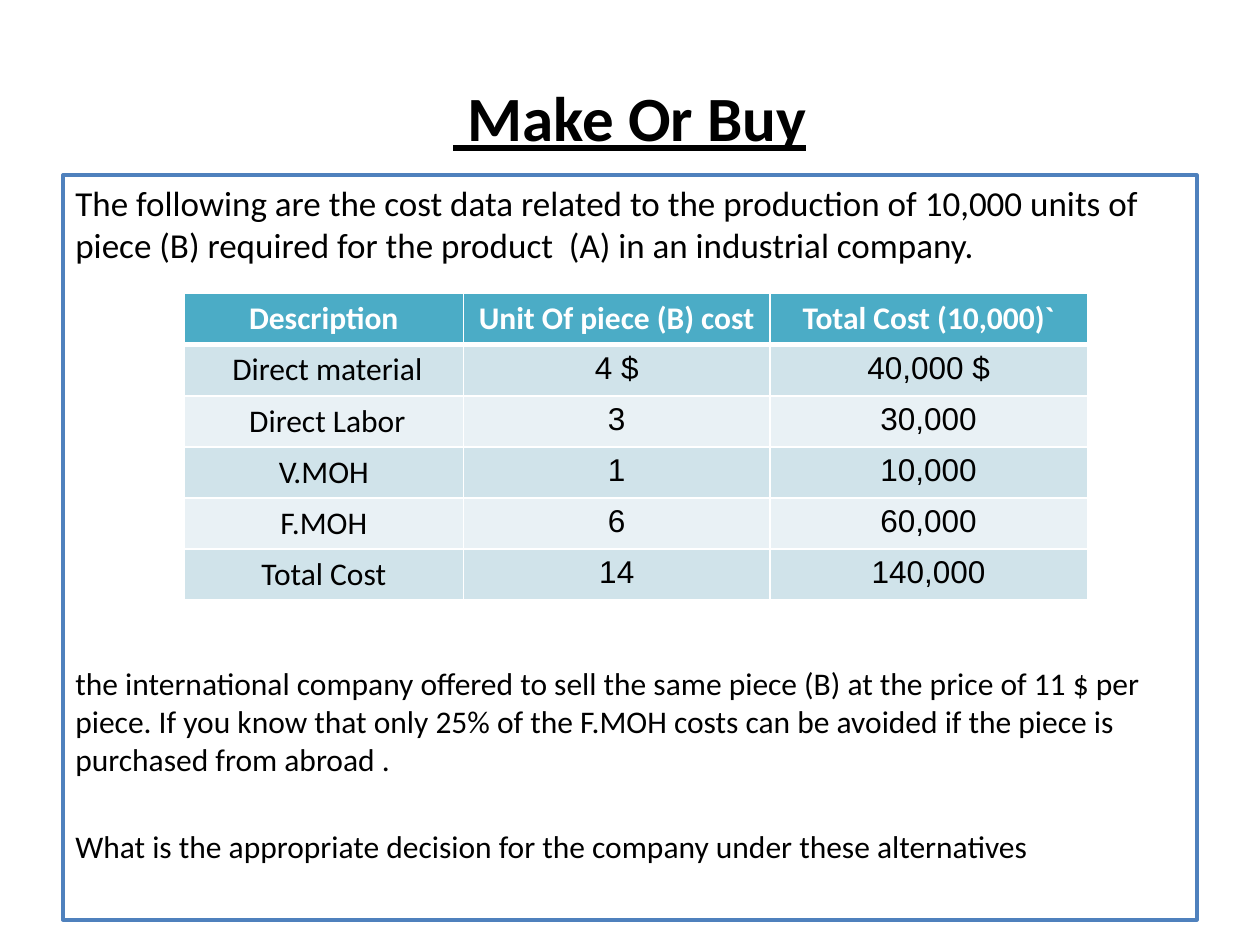
from dataclasses import dataclass

from lxml import etree
from pptx import Presentation
from pptx import util as u
from pptx.dml.color import RGBColor
from pptx.enum import shapes, text
from pptx.oxml import ns

PX = 9144  # EMU per px, at 100 px to the inch
FONT = "Calibri"
NUMBER_FONT = "Arial"
COLORS = {
    "text": "000000",
    "paper": "FFFFFF",
    "frame": "4F81BD",
    "header": "4BACC6",
    "band_dark": "D0E3EA",
    "band_light": "E9F1F5",
}


@dataclass(frozen=True)
class Box:
    left: int
    top: int
    width: int
    height: int

    def emu(self) -> tuple[int, ...]:
        return tuple(n * PX for n in (self.left, self.top, self.width, self.height))


@dataclass(frozen=True)
class BodyText:
    content: str
    size: int
    space_before: int = 0


@dataclass(frozen=True)
class CostRow:
    description: str
    unit_cost: str
    total_cost: str

    def cells(self) -> tuple[str, ...]:
        return self.description, self.unit_cost, self.total_cost


TITLE_BOX = Box(50, 30, 900, 125)
BODY_BOX = Box(50, 139, 900, 591)
TABLE_BOX = Box(146, 233, 717, 243)
COLUMN_WIDTHS = (222, 243, 252)

BODY = (
    BodyText("The following are the cost data related to the production of 10,000 units of "
             "piece (B) required for the product  (A) in an industrial company.", 20),
    BodyText("the international company offered to sell the same piece (B) at the price of "
             "11 $ per piece. If you know that only 25% of the F.MOH costs can be avoided if "
             "the piece is purchased from abroad .", 18, 228),
    BodyText("What is the appropriate decision for the company under these alternatives", 18, 28),
)

# Right-to-left cells: the currency sign is typed before the amount
COSTS = (
    CostRow("Description", "Unit Of piece (B) cost", "`Total Cost (10,000)"),
    CostRow("Direct material ", "$ 4", "$ 40,000"),
    CostRow("Direct Labor ", "3", "30,000"),
    CostRow("V.MOH", "1", "10,000"),
    CostRow("F.MOH", "6", "60,000"),
    CostRow("Total Cost", "14", "140,000"),
)


def rgb(name: str) -> RGBColor:
    return RGBColor.from_string(COLORS[name])


def write(paragraph, content: str, *, size: int, color: str = "text", bold: bool = False,
          underline: bool = False, align=text.PP_ALIGN.LEFT, rtl: bool = False,
          complex_font: str = FONT, space_before: int = 0) -> None:
    run = paragraph.add_run()
    run.text = content
    font = run.font
    font.name, font.size, font.bold, font.underline = FONT, u.Pt(size), bold, underline
    font.color.rgb = rgb(color)
    etree.SubElement(run._r.get_or_add_rPr(), ns.qn("a:cs"), typeface=complex_font)
    paragraph.alignment = align
    paragraph.space_before = u.Pt(space_before)
    if rtl:
        paragraph._p.get_or_add_pPr().set("rtl", "1")


def set_borders(cell, bottom_width: int) -> None:
    properties = cell._tc.get_or_add_tcPr()
    for side, width in (("L", 1), ("R", 1), ("T", 1), ("B", bottom_width)):
        line = etree.SubElement(properties, ns.qn(f"a:ln{side}"), w=str(u.Pt(width)))
        fill = etree.SubElement(line, ns.qn("a:solidFill"))
        etree.SubElement(fill, ns.qn("a:srgbClr"), val=COLORS["paper"])


def draw_title(slide) -> None:
    title = slide.shapes.title
    title.left, title.top, title.width, title.height = TITLE_BOX.emu()
    title.text_frame.vertical_anchor = text.MSO_ANCHOR.MIDDLE
    write(title.text_frame.paragraphs[0], "Make Or Buy ", size=36, bold=True,
          underline=True, align=text.PP_ALIGN.CENTER, rtl=True)


def draw_body(slide) -> None:
    shape = slide.shapes.add_shape(shapes.MSO_SHAPE.RECTANGLE, *BODY_BOX.emu())
    shape.shadow.inherit = False
    shape.fill.solid()
    shape.fill.fore_color.rgb = rgb("paper")
    shape.line.color.rgb = rgb("frame")
    shape.line.width = u.Pt(2)
    frame = shape.text_frame
    frame.word_wrap = True
    frame.vertical_anchor = text.MSO_ANCHOR.TOP
    for index, item in enumerate(BODY):
        paragraph = frame.add_paragraph() if index else frame.paragraphs[0]
        write(paragraph, item.content, size=item.size, space_before=item.space_before)


def draw_table(slide) -> None:
    table = slide.shapes.add_table(len(COSTS), len(COLUMN_WIDTHS), *TABLE_BOX.emu()).table
    for column, width in zip(table.columns, COLUMN_WIDTHS):
        column.width = width * PX
    for row_index, row in enumerate(COSTS):
        header = row_index == 0
        band = "header" if header else ("band_light", "band_dark")[row_index % 2]
        for column_index, content in enumerate(row.cells()):
            cell = table.cell(row_index, column_index)
            set_borders(cell, 3 if header else 1)
            cell.fill.solid()
            cell.fill.fore_color.rgb = rgb(band)
            is_number = not header and column_index > 0
            write(cell.text_frame.paragraphs[0], content, size=18, bold=header,
                  color="paper" if header else "text", align=text.PP_ALIGN.CENTER,
                  rtl=True, complex_font=NUMBER_FONT if is_number else FONT)


def main() -> None:
    presentation = Presentation()
    presentation.slide_width, presentation.slide_height = 1000 * PX, 750 * PX
    slide = presentation.slides.add_slide(presentation.slide_layouts[5])  # title only
    draw_title(slide)
    draw_body(slide)
    draw_table(slide)
    presentation.save("out.pptx")


if __name__ == "__main__":
    main()
